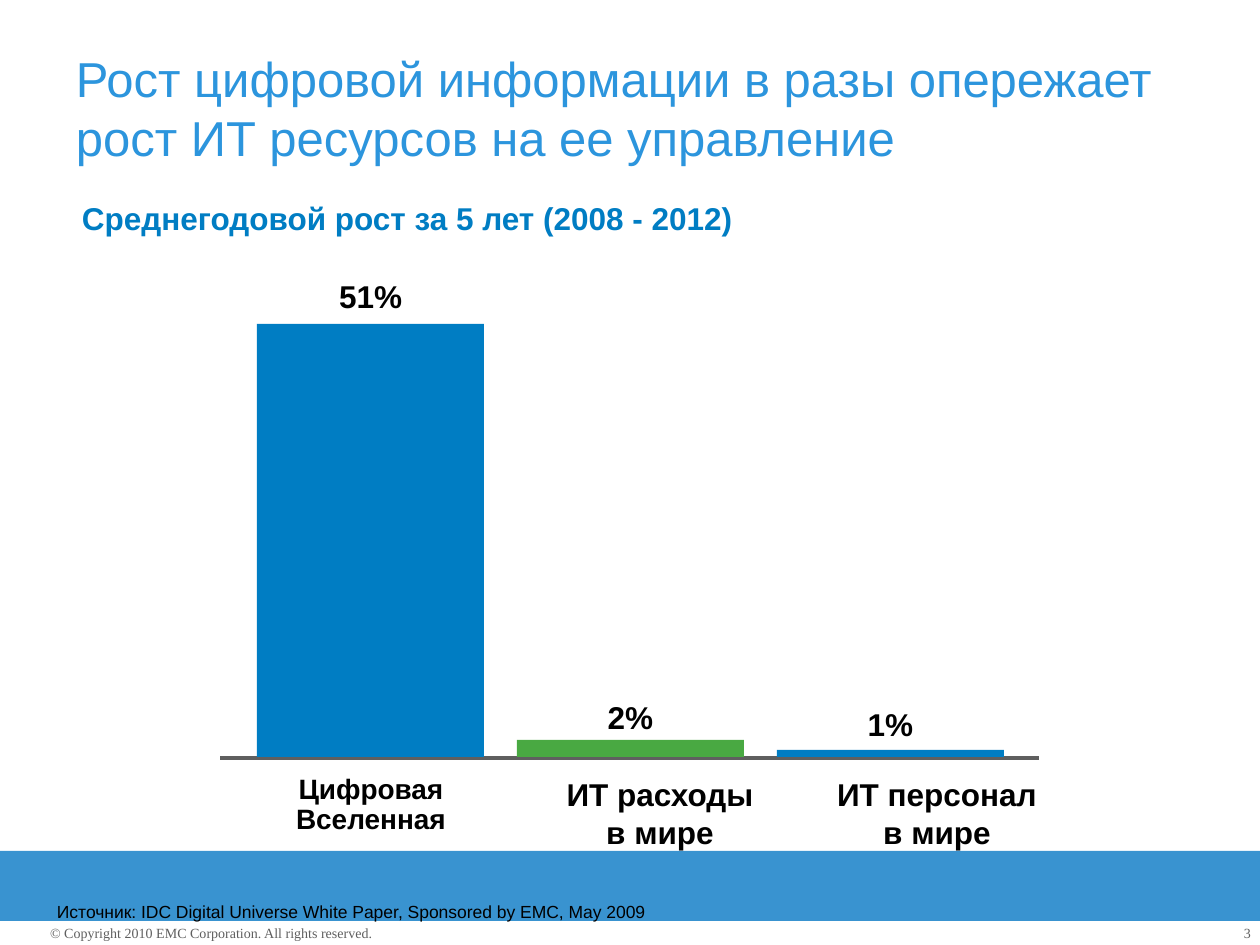
from lxml import etree
from pptx import Presentation, util as u
from pptx.dml.color import RGBColor
from pptx.enum import shapes, text
from pptx.oxml.ns import qn

PX = 914400 // 126
BLUE, GREEN, BAND, SKY = "007DC3", "49A942", "3993D0", "2C95DD"
GREY, BLACK = "5F5F5F", "000000"
SANS, SERIF = "Arial", "Times New Roman"
LEFT, MID, RIGHT = text.PP_ALIGN.LEFT, text.PP_ALIGN.CENTER, text.PP_ALIGN.RIGHT


def px(*vals):
    return [u.Emu(v * PX) for v in vals]


def hue(code):
    return RGBColor.from_string(code)


class Deck:
    """Holds the style and the current slide."""

    def __init__(self):
        self.prs = Presentation()
        self.prs.slide_width, self.prs.slide_height = u.Inches(10), u.Inches(7.5)
        self.slide = self.prs.slides.add_slide(self.prs.slide_layouts[6])

    def rect(self, x, y, w, h, fill):
        box = self.slide.shapes.add_shape(shapes.MSO_SHAPE.RECTANGLE, *px(x, y, w, h))
        box.shadow.inherit = False
        box.fill.solid()
        box.fill.fore_color.rgb = hue(fill)
        box.line.fill.background()

    def line(self, x1, y1, x2, y2, color, width):
        rule = self.slide.shapes.add_connector(
            shapes.MSO_CONNECTOR.STRAIGHT, *px(x1, y1, x2, y2))
        rule.line.color.rgb = hue(color)
        rule.line.width = u.Pt(width)
        etree.SubElement(rule._element.spPr, qn("a:effectLst"))

    def text(self, x, y, w, h, lines, size, color=BLACK, font=SANS,
             bold=False, align=LEFT, space=1.0, wrap=False):
        frame = self.slide.shapes.add_textbox(*px(x, y, w, h)).text_frame
        frame.margin_left = frame.margin_right = 0
        frame.margin_top = frame.margin_bottom = 0
        frame.word_wrap = wrap
        frame.vertical_anchor = text.MSO_ANCHOR.TOP
        for i, line in enumerate(lines):
            para = frame.add_paragraph() if i else frame.paragraphs[0]
            para.alignment, para.line_spacing = align, space
            run = para.add_run()
            run.text = line
            run.font.name, run.font.size = font, u.Pt(size)
            run.font.bold = bold
            run.font.color.rgb = hue(color)

    def save(self):
        self.prs.save("out.pptx")


def main():
    deck = Deck()
    deck.rect(0, 851, 1260, 70, BAND)
    deck.text(1178, 925, 73, 18, ["3"], 8, GREY, SERIF, align=RIGHT, wrap=True)
    deck.text(50, 925, 333, 18,
              ["© Copyright 2010 EMC Corporation. All rights reserved."],
              8, GREY, SERIF)
    deck.text(76, 49, 1109, 140,
              ["Рост цифровой информации в разы опережает рост ИТ ресурсов на ее управление"],
              28, SKY, wrap=True)
    deck.text(82, 199, 654, 38, ["Среднегодовой рост за 5 лет (2008 - 2012)"],
              18, BLUE, bold=True)
    deck.line(1039, 758, 220, 758, GREY, 2.25)

    base, left, step, wide = 757, 257, 260, 227
    bars = [
        (433, BLUE, "51%", 281, ["Цифровая", "Вселенная"], 371, 16, 0.9),
        (17, GREEN, "2%", 702, ["ИТ расходы", "в мире"], 660, 18, 1.0),
        (7, BLUE, "1%", 709, ["ИТ персонал", "в мире"], 937, 18, 1.0),
    ]
    for i, (high, fill, value, top, name, mid, size, space) in enumerate(bars):
        x = left + i * step
        deck.rect(x, base - high, wide, high, fill)
        deck.text(x + 82, top, 63, 34, [value], 18, bold=True, align=MID, space=0.9)
        deck.text(mid - 100, 775, 200, 76, name, size, bold=True, align=MID, space=space)

    deck.text(57, 901, 590, 21,
              ["Источник: IDC Digital Universe White Paper, Sponsored by EMC, May 2009"], 10)
    deck.save()


if __name__ == "__main__":
    main()
